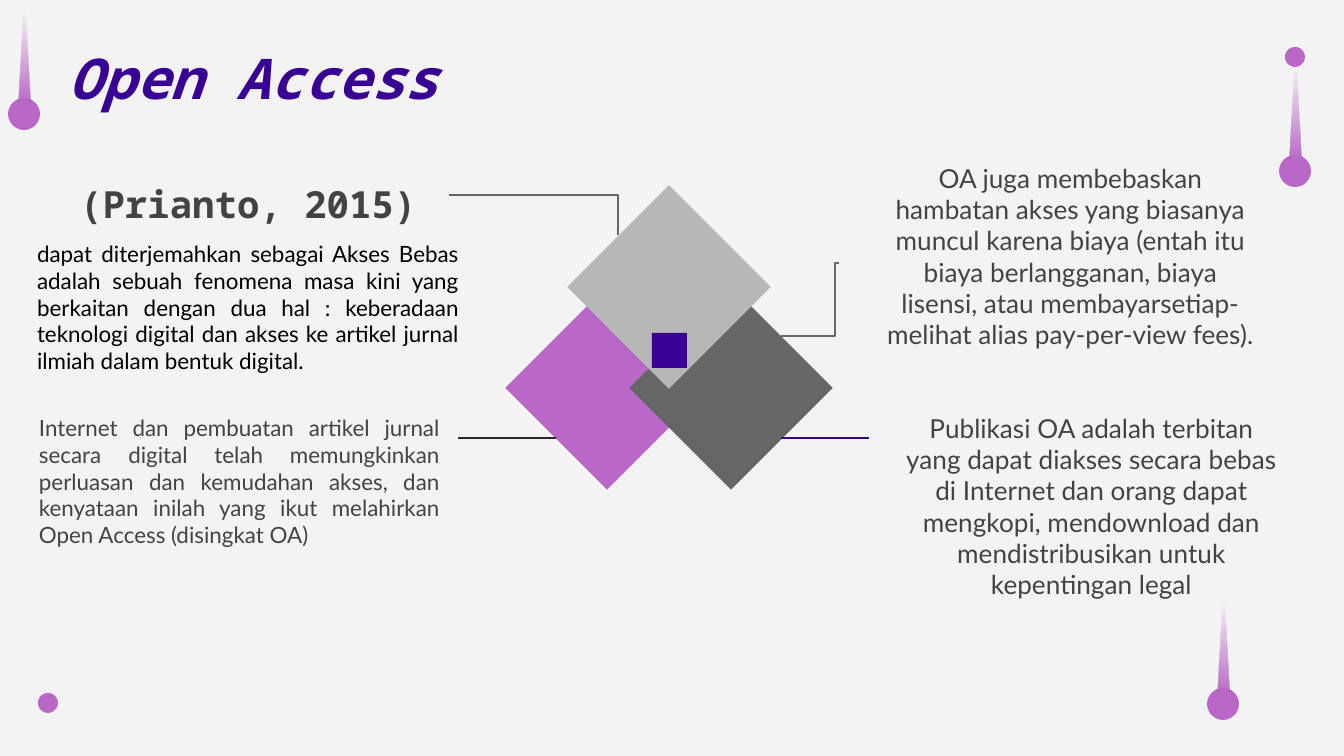
from dataclasses import dataclass

from lxml import etree
from pptx import Presentation
from pptx.dml.color import RGBColor
from pptx.enum.shapes import MSO_CONNECTOR, MSO_SHAPE
from pptx.enum.text import MSO_ANCHOR, MSO_AUTO_SIZE, PP_ALIGN
from pptx.oxml import parse_xml
from pptx.oxml.ns import qn
from pptx.util import Emu, Pt

RECT = MSO_SHAPE.RECTANGLE
OVAL = MSO_SHAPE.OVAL
SPIKE = MSO_SHAPE.ISOSCELES_TRIANGLE
STRAIGHT = MSO_CONNECTOR.STRAIGHT
ELBOW = MSO_CONNECTOR.ELBOW
LEFT, CENTER, JUSTIFY = PP_ALIGN.LEFT, PP_ALIGN.CENTER, PP_ALIGN.JUSTIFY
MIDDLE, TOP = MSO_ANCHOR.MIDDLE, MSO_ANCHOR.TOP
BOTTOM_SIDE, RIGHT_SIDE = 2, 3

WIDTH, HEIGHT = 1344, 756
SCALE = 9144000 / WIDTH
INSET = 13
BALL, DOT, TILE = 32, 20, 144
SANS, MONO = "Lato", "Noto Sans Mono"
COLORS = {
    "back": "F3F3F3",
    "orchid": "BA68C8",
    "violet": "380093",
    "dark": "666666",
    "light": "B7B7B7",
    "text": "434343",
    "black": "000000",
    "ink": "292929",
}


@dataclass
class Block:
    text: str
    x: int
    y: int
    w: int
    h: int
    size: int
    align: PP_ALIGN
    color: str = "text"
    font: str = SANS
    bold: bool = False
    italic: bool = False
    anchor: MSO_ANCHOR = TOP


@dataclass
class Wire:
    kind: MSO_CONNECTOR
    x1: int
    y1: int
    x2: int
    y2: int
    color: str


TITLE = Block("Open Access", 56, 42, 804, 70, 30, LEFT, "violet", MONO, True, True, MIDDLE)
BLOCKS = [
    Block("OA juga membebaskan hambatan akses yang biasanya muncul karena biaya "
          "(entah itu biaya berlangganan, biaya lisensi, atau "
          "membayarsetiap-melihat alias pay-per-view fees).",
          870, 149, 401, 196, 14, CENTER),
    Block("Internet dan pembuatan artikel jurnal secara digital telah memungkinkan "
          "perluasan dan kemudahan akses, dan kenyataan inilah yang ikut melahirkan "
          "Open Access (disingkat OA)",
          26, 401, 427, 171, 12, JUSTIFY),
    Block("(Prianto, 2015)", 48, 168, 401, 54, 20, CENTER, "text", MONO, True),
    Block("dapat diterjemahkan sebagai Akses Bebas adalah sebuah fenomena masa kini "
          "yang berkaitan dengan dua hal : keberadaan teknologi digital dan akses ke "
          "artikel jurnal ilmiah dalam bentuk digital.",
          24, 227, 448, 156, 12, JUSTIFY, "black"),
    Block("Publikasi OA adalah terbitan yang dapat diakses secara bebas di Internet "
          "dan orang dapat mengkopi, mendownload dan mendistribusikan untuk "
          "kepentingan legal",
          891, 399, 401, 196, 14, CENTER),
]
PINS = [(1207, 688), (8, 98), (1279, 155)]
DOTS = [(38, 693), (1285, 47)]


def px(n: int) -> Emu:
    return Emu(round(n * SCALE))


def rgb(name: str) -> RGBColor:
    return RGBColor.from_string(COLORS[name])


def add_form(slide, kind, x: int, y: int, w: int, h: int, color: str, turn: int = 0):
    form = slide.shapes.add_shape(kind, px(x), px(y), px(w), px(h))
    form.shadow.inherit = False
    form.fill.solid()
    form.fill.fore_color.rgb = rgb(color)
    form.line.fill.background()
    form.rotation = turn
    return form


def add_pin(slide, x: int, y: int) -> None:
    add_form(slide, OVAL, x, y, BALL, BALL, "orchid")
    spike = add_form(slide, SPIKE, x + 11, y - 110, 11, 117, "orchid")
    stops = "".join(
        f'<a:gs pos="{pos}"><a:srgbClr val="{COLORS["orchid"]}">'
        f'<a:alpha val="{alpha}"/></a:srgbClr></a:gs>'
        for pos, alpha in [(0, 100000), (80000, 0), (100000, 0)]
    )
    fade = parse_xml(
        '<a:gradFill xmlns:a="http://schemas.openxmlformats.org/drawingml/2006/main" '
        f'rotWithShape="1"><a:gsLst>{stops}</a:gsLst>'
        '<a:lin ang="16200000" scaled="0"/></a:gradFill>'
    )
    props = spike.element.spPr
    props.replace(props.find(qn("a:solidFill")), fade)


def add_wire(slide, wire: Wire):
    line = slide.shapes.add_connector(
        wire.kind, px(wire.x1), px(wire.y1), px(wire.x2), px(wire.y2))
    line.line.color.rgb = rgb(wire.color)
    line.line.width = Pt(0.75)
    etree.SubElement(line.element.spPr, qn("a:effectLst"))
    return line


def join(slide, wire: Wire, tile, side: int) -> None:
    line = add_wire(slide, wire)
    line.begin_connect(tile, side)
    line.begin_x, line.begin_y = px(wire.x1), px(wire.y1)


def set_text(shape, block: Block) -> None:
    shape.left, shape.top = px(block.x), px(block.y)
    shape.width, shape.height = px(block.w), px(block.h)
    frame = shape.text_frame
    frame.text = block.text
    frame.word_wrap = True
    frame.auto_size = MSO_AUTO_SIZE.NONE
    frame.vertical_anchor = block.anchor
    frame.margin_left = frame.margin_right = px(INSET)
    frame.margin_top = frame.margin_bottom = px(INSET)
    para = frame.paragraphs[0]
    para.alignment = block.align
    font = para.font
    font.name, font.size = block.font, Pt(block.size)
    font.bold, font.italic = block.bold, block.italic
    font.color.rgb = rgb(block.color)


def main() -> None:
    deck = Presentation()
    deck.slide_width, deck.slide_height = px(WIDTH), px(HEIGHT)
    slide = deck.slides.add_slide(deck.slide_layouts[5])
    slide.background.fill.solid()
    slide.background.fill.fore_color.rgb = rgb("back")
    set_text(slide.shapes.title, TITLE)

    for x, y in DOTS:
        add_form(slide, OVAL, x, y, DOT, DOT, "orchid")
    for x, y in PINS:
        add_pin(slide, x, y)

    west = add_form(slide, RECT, 535, 316, TILE, TILE, "orchid", 45)
    east = add_form(slide, RECT, 659, 316, TILE, TILE, "dark", 45)
    add_form(slide, RECT, 597, 215, TILE, TILE, "light", 45)

    step = add_wire(slide, Wire(ELBOW, 781, 336, 839, 263, "dark"))
    guide = etree.SubElement(step.element.spPr.find(qn("a:prstGeom")).find(qn("a:avLst")), qn("a:gd"))
    guide.set("name", "adj1")
    guide.set("fmla", "val 93200")
    bend = add_wire(slide, Wire(ELBOW, 449, 195, 618, 235, "dark"))
    bend.element.spPr.find(qn("a:prstGeom")).set("prst", "bentConnector2")
    join(slide, Wire(STRAIGHT, 781, 438, 869, 438, "violet"), east, RIGHT_SIDE)
    join(slide, Wire(STRAIGHT, 556, 438, 458, 438, "ink"), west, BOTTOM_SIDE)

    add_form(slide, RECT, 652, 333, 35, 35, "violet")
    for block in BLOCKS:
        set_text(slide.shapes.add_textbox(0, 0, 0, 0), block)
    deck.save("out.pptx")


if __name__ == "__main__":
    main()
